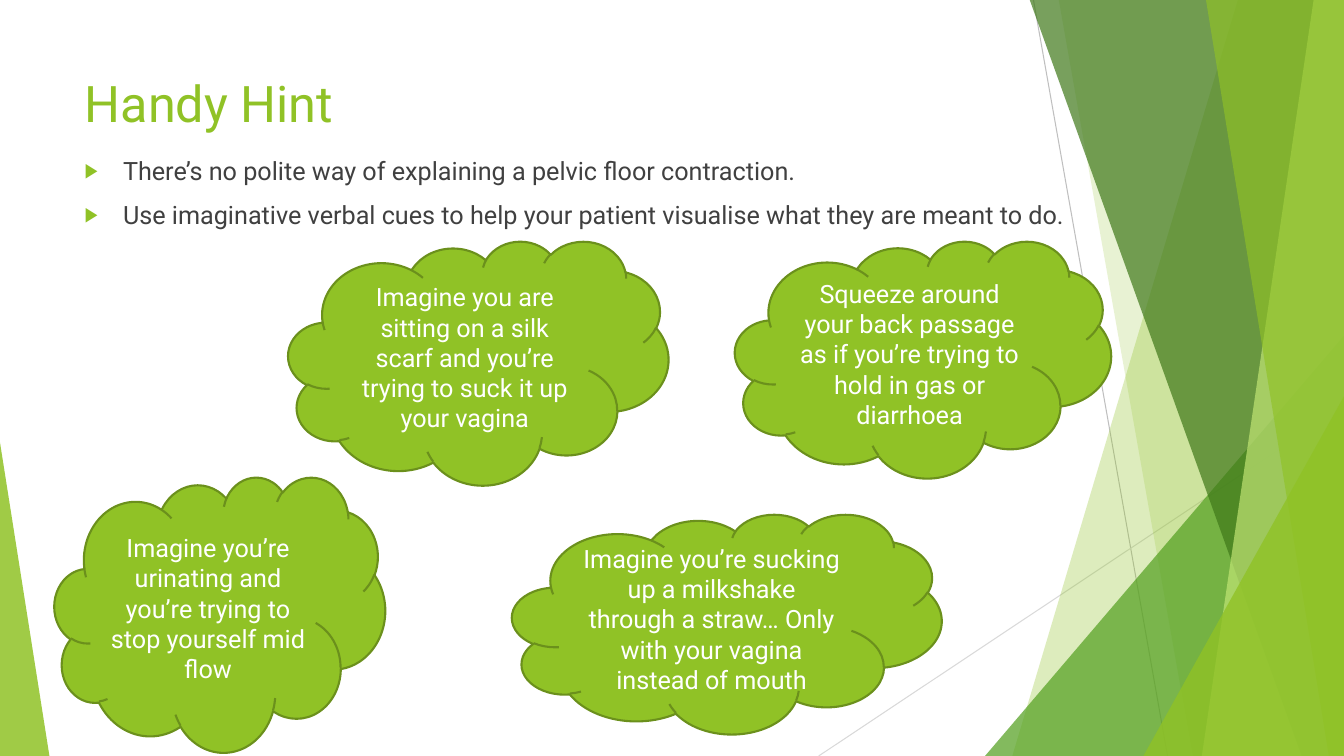
from lxml.etree import SubElement
from pptx import Presentation
from pptx.dml.color import RGBColor
from pptx.enum.shapes import MSO_CONNECTOR as Connector, MSO_SHAPE as Preset
from pptx.enum.text import MSO_ANCHOR as Anchor, MSO_AUTO_SIZE as AutoSize, PP_ALIGN as Align
from pptx.oxml.ns import qn
from pptx.util import Pt

PX = 9144  # EMU per px, 100 px to the inch
WIDTH, HEIGHT = 1333, 750
COLOURS = {
    "lime": "90C226", "outline": "6B901C", "leaf": "54A021", "forest": "3F7819",
    "pale": "C0E474", "text": "404040", "white": "FFFFFF",
    "grey": "BFBFBF", "light grey": "D9D9D9",
}


def rgb(colour):
    return RGBColor.from_string(COLOURS[colour])


def write(paragraph, text, *, size=18, colour="text", align=Align.LEFT, before=0):
    paragraph.alignment = align
    paragraph.space_before = Pt(before)
    run = paragraph.add_run()
    run.text = text
    run.font.name = "Roboto"
    run.font.size = Pt(size)
    run.font.color.rgb = rgb(colour)


class HintSlide:
    def __init__(self, deck):
        self.slide = deck.slides.add_slide(deck.slide_layouts[1])
        self.shapes = self.slide.shapes

    def paint(self, shape, colour, opacity=100, outline=None):
        shape.shadow.inherit = False
        shape.fill.solid()
        shape.fill.fore_color.rgb = rgb(colour)
        if opacity < 100:
            tint = shape.element.spPr.find(qn("a:solidFill"))[0]
            SubElement(tint, qn("a:alpha"), val=str(opacity * 1000))
        if outline:
            shape.line.color.rgb = rgb(outline)
            shape.line.width = Pt(1.5)
        else:
            shape.line.fill.background()

    def ray(self, x1, y1, x2, y2, colour):
        line = self.shapes.add_connector(
            Connector.STRAIGHT, x1 * PX, y1 * PX, x2 * PX, y2 * PX)
        line.line.color.rgb = rgb(colour)
        line.line.width = Pt(0.75)
        SubElement(line.element.spPr, qn("a:effectLst"))

    def band(self, top_x, bottom_x, colour, opacity):
        """Fill from a slanted edge to the right side of the slide."""
        builder = self.shapes.build_freeform(top_x, -1, scale=PX)
        builder.add_line_segments([(WIDTH, -1), (WIDTH, HEIGHT), (bottom_x, HEIGHT)])
        self.paint(builder.convert_to_shape(), colour, opacity)

    def corner(self, left, top, width, apex, colour, opacity):
        """Triangle standing on the bottom edge of the slide."""
        triangle = self.shapes.add_shape(
            Preset.ISOSCELES_TRIANGLE, left * PX, top * PX, width * PX, (HEIGHT - top) * PX)
        triangle.adjustments[0] = apex
        self.paint(triangle, colour, opacity)

    def place(self, holder, left, top, width, height):
        holder.left, holder.top = left * PX, top * PX
        holder.width, holder.height = width * PX, height * PX
        frame = holder.text_frame
        frame.auto_size = AutoSize.NONE
        frame.word_wrap = True
        frame.vertical_anchor = Anchor.TOP
        self.shapes.element.append(holder.element)  # in front of the backdrop
        return frame

    def title(self, text, *box):
        frame = self.place(self.shapes.title, *box)
        write(frame.paragraphs[0], text, size=36, colour="lime")

    def bullets(self, points, *box):
        frame = self.place(self.slide.placeholders[1], *box)
        for index, point in enumerate(points):
            paragraph = frame.add_paragraph() if index else frame.paragraphs[0]
            write(paragraph, point, before=10)
            props = paragraph._p.get_or_add_pPr()
            props.set("marL", str(38 * PX))
            props.set("indent", str(-38 * PX))
            tint = SubElement(props, qn("a:buClr"))
            SubElement(tint, qn("a:srgbClr"), val=COLOURS["lime"])
            SubElement(props, qn("a:buSzPct"), val="80000")
            SubElement(props, qn("a:buChar"), char="▶")

    def cloud(self, text, left, top, width, height):
        cue = self.shapes.add_shape(
            Preset.CLOUD, left * PX, top * PX, width * PX, height * PX)
        self.paint(cue, "lime", outline="outline")
        cue.text_frame.word_wrap = True
        cue.text_frame.vertical_anchor = Anchor.MIDDLE
        write(cue.text_frame.paragraphs[0], text, colour="white", align=Align.CENTER)


def main():
    deck = Presentation()
    deck.slide_width, deck.slide_height = WIDTH * PX, HEIGHT * PX
    hint = HintSlide(deck)

    # Faceted backdrop
    hint.ray(1025, 0, 1158, HEIGHT, "grey")
    hint.ray(WIDTH, 403, 812, HEIGHT, "light grey")
    hint.band(1228, 1004, "lime", 30)
    hint.band(1050, 1183, "lime", 20)
    hint.corner(977, 333, 356, 1, "leaf", 72)
    hint.band(1021, 1291, "forest", 70)
    hint.band(1303, 1192, "pale", 70)
    hint.band(1196, 1318, "lime", 65)
    hint.corner(1134, 393, 199, 1, "lime", 80)
    hint.corner(0, 439, 49, 0, "lime", 85)

    # Heading and advice
    hint.title("Handy Hint", 74, 67, 940, 144)
    hint.bullets([
        "There’s no polite way of explaining a pelvic floor contraction.",
        "Use imaginative verbal cues to help your patient visualise what they are meant to do.",
    ], 74, 149, 1087, 222)

    # Verbal cues
    hint.cloud("Squeeze around your back passage as if you’re trying to hold in gas or diarrhoea",
               729, 239, 373, 235)
    hint.cloud("Imagine you are sitting on a silk scarf and you’re trying to suck it up your vagina",
               286, 239, 377, 242)
    hint.cloud("Imagine you’re urinating and you’re trying to stop yourself mid flow",
               54, 473, 328, 273)
    hint.cloud("Imagine you’re sucking up a milkshake through a straw… "
               "Only with your vagina instead of mouth",
               508, 510, 426, 218)

    deck.save("out.pptx")


if __name__ == "__main__":
    main()
